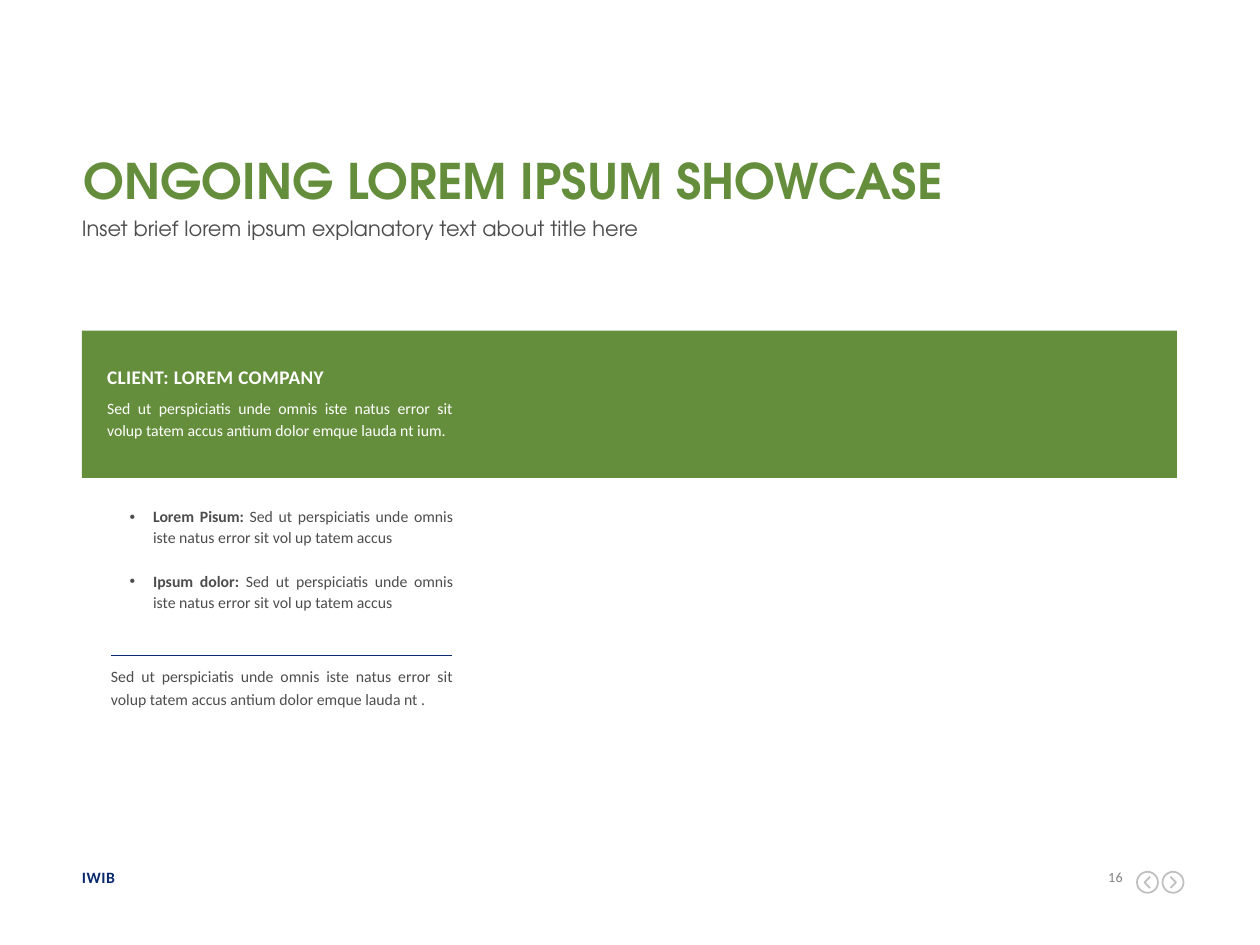
from dataclasses import dataclass

from lxml import etree
from pptx import Presentation
from pptx.dml.color import RGBColor
from pptx.enum.shapes import MSO_CONNECTOR, MSO_SHAPE
from pptx.enum.text import MSO_ANCHOR, MSO_AUTO_SIZE, PP_ALIGN
from pptx.oxml.ns import qn
from pptx.util import Pt

LEFT, RIGHT, JUSTIFY = PP_ALIGN.LEFT, PP_ALIGN.RIGHT, PP_ALIGN.JUSTIFY
TOP, NO_FIT = MSO_ANCHOR.TOP, MSO_AUTO_SIZE.NONE
RECTANGLE, OVAL = MSO_SHAPE.RECTANGLE, MSO_SHAPE.OVAL
STRAIGHT = MSO_CONNECTOR.STRAIGHT
TITLE_ONLY = 5


@dataclass(frozen=True)
class Theme:
    green: str = "658E3C"
    navy: str = "092A6D"
    body: str = "4D4D4D"
    white: str = "FFFFFF"
    number: str = "808080"
    icon: str = "BFBFBF"
    display_font: str = "TeX Gyre Adventor"
    text_font: str = "Calibri"
    title_size: float = 28
    subtitle_size: float = 12
    heading_size: float = 11
    body_size: float = 9
    number_size: float = 8


class SlideBuilder:
    def __init__(self, page, theme):
        self.page = page
        self.theme = theme

    def add_span(self, para, text, size, color, bold=False, font=None, tracking=0):
        span = para.add_run()
        span.text = text
        span.font.name = font or self.theme.text_font
        span.font.size = Pt(size)
        span.font.bold = bold
        span.font.color.rgb = RGBColor.from_string(color)
        if tracking:
            span._r.get_or_add_rPr().set("spc", str(round(tracking * 100)))

    def title(self, text, left, top, width, height):
        box = self.page.shapes.title
        box.left, box.top, box.width, box.height = map(Pt, (left, top, width, height))
        box.text_frame.auto_size = NO_FIT
        box.text_frame.vertical_anchor = TOP
        para = box.text_frame.paragraphs[0]
        para.alignment = LEFT
        para.line_spacing = 0.9
        self.add_span(para, text, self.theme.title_size, self.theme.green,
                      bold=True, font=self.theme.display_font)

    def text(self, spans, left, top, width, height, size, color, align=LEFT,
             leading=None, bullet=False, font=None, tracking=0):
        """Spans are (text, bold) pairs that share one paragraph."""
        box = self.page.shapes.add_textbox(*map(Pt, (left, top, width, height)))
        frame = box.text_frame
        frame.word_wrap = True
        frame.margin_left = frame.margin_right = 0
        frame.margin_top = frame.margin_bottom = 0
        para = frame.paragraphs[0]
        para.alignment = align
        if leading:
            para.line_spacing = Pt(leading)
        if bullet:
            properties = para._p.get_or_add_pPr()
            indent = Pt(13.5)
            properties.set("marL", str(indent))
            properties.set("indent", str(-indent))
            etree.SubElement(properties, qn("a:buFont")).set("typeface", "Arial")
            etree.SubElement(properties, qn("a:buChar")).set("char", "•")
        for text, bold in spans:
            self.add_span(para, text, size, color, bold, font, tracking)

    def band(self, left, top, width, height, color):
        band = self.page.shapes.add_shape(RECTANGLE, *map(Pt, (left, top, width, height)))
        band.shadow.inherit = False
        band.fill.solid()
        band.fill.fore_color.rgb = RGBColor.from_string(color)
        band.line.fill.background()

    def rule(self, left, top, width, color):
        rule = self.page.shapes.add_connector(
            STRAIGHT, *map(Pt, (left, top, left + width, top)))
        rule.line.color.rgb = RGBColor.from_string(color)
        rule.line.width = Pt(0.75)
        etree.SubElement(rule._element.spPr, qn("a:effectLst"))

    def arrow_button(self, center_x, center_y, direction):
        """Ringed chevron; direction is -1 for back and 1 for forward."""
        radius, reach = 6, 3.2
        ring = self.page.shapes.add_shape(
            OVAL, Pt(center_x - radius), Pt(center_y - radius),
            Pt(2 * radius), Pt(2 * radius))
        tail, tip = center_x - 1.5 * direction, center_x + 1.7 * direction
        outline = self.page.shapes.build_freeform(
            Pt(tail), Pt(center_y - reach), scale=1.0)
        outline.add_line_segments(
            [(Pt(tip), Pt(center_y)), (Pt(tail), Pt(center_y + reach))], close=False)
        for part in (ring, outline.convert_to_shape()):
            part.shadow.inherit = False
            part.fill.background()
            part.line.color.rgb = RGBColor.from_string(self.theme.icon)
            part.line.width = Pt(1)


def main():
    deck = Presentation()
    deck.slide_width, deck.slide_height = Pt(720), Pt(540)
    theme = Theme()
    page = deck.slides.add_slide(deck.slide_layouts[TITLE_ONLY])
    slide = SlideBuilder(page, theme)
    margin, content_width = 46.8, 625.7

    # Footer and navigation
    slide.text([("IWIB", True)], margin, 496.1, 140.4, 10.8,
               theme.body_size, theme.navy, tracking=0.3)
    slide.text([("16", False)], 625, 496.1, 16.6, 9.4,
               theme.number_size, theme.number, align=RIGHT, tracking=0.3)
    for center_x, direction in ((655.7, -1), (670.3, 1)):
        slide.arrow_button(center_x, 504.2, direction)

    # Title and subtitle
    slide.title("ONGOING LOREM IPSUM SHOWCASE", 40.3, 86.4, 632.2, 30.2)
    slide.text([("Inset brief lorem ipsum explanatory text about title here", False)],
               margin, 125.3, content_width, 10.8, theme.subtitle_size, theme.body,
               leading=12, font=theme.display_font)

    # Client band
    slide.band(margin, 188.9, content_width, 84.2, theme.green)
    slide.text([("CLIENT: LOREM COMPANY", True)], 61.2, 205.2, 197.3, 15.8,
               theme.heading_size, theme.white, leading=17, tracking=0.2)
    slide.text([("Sed ut perspiciatis unde omnis iste natus error sit "
                 "volup tatem accus antium dolor emque lauda nt ium.", False)],
               61.2, 225.4, 197.3, 25.2, theme.body_size, theme.white,
               align=JUSTIFY, leading=13)

    # Bulleted points
    detail = "Sed ut perspiciatis unde omnis iste natus error sit vol up tatem accus"
    for row, label in enumerate(("Lorem Pisum:", "Ipsum dolor:")):
        slide.text([(label, True), (" " + detail, False)],
                   74, 288.7 + 36.7 * row, 184.8, 23.8, theme.body_size, theme.body,
                   align=JUSTIFY, leading=12, bullet=True)

    # Closing note under a rule
    slide.rule(63.4, 374.4, 195.1, theme.navy)
    slide.text([("Sed ut perspiciatis unde omnis iste natus error sit "
                 "volup tatem accus antium dolor emque lauda nt .", False)],
               63.4, 378.7, 195.1, 25.2, theme.body_size, theme.body,
               align=JUSTIFY, leading=13)

    deck.save("out.pptx")


if __name__ == "__main__":
    main()
